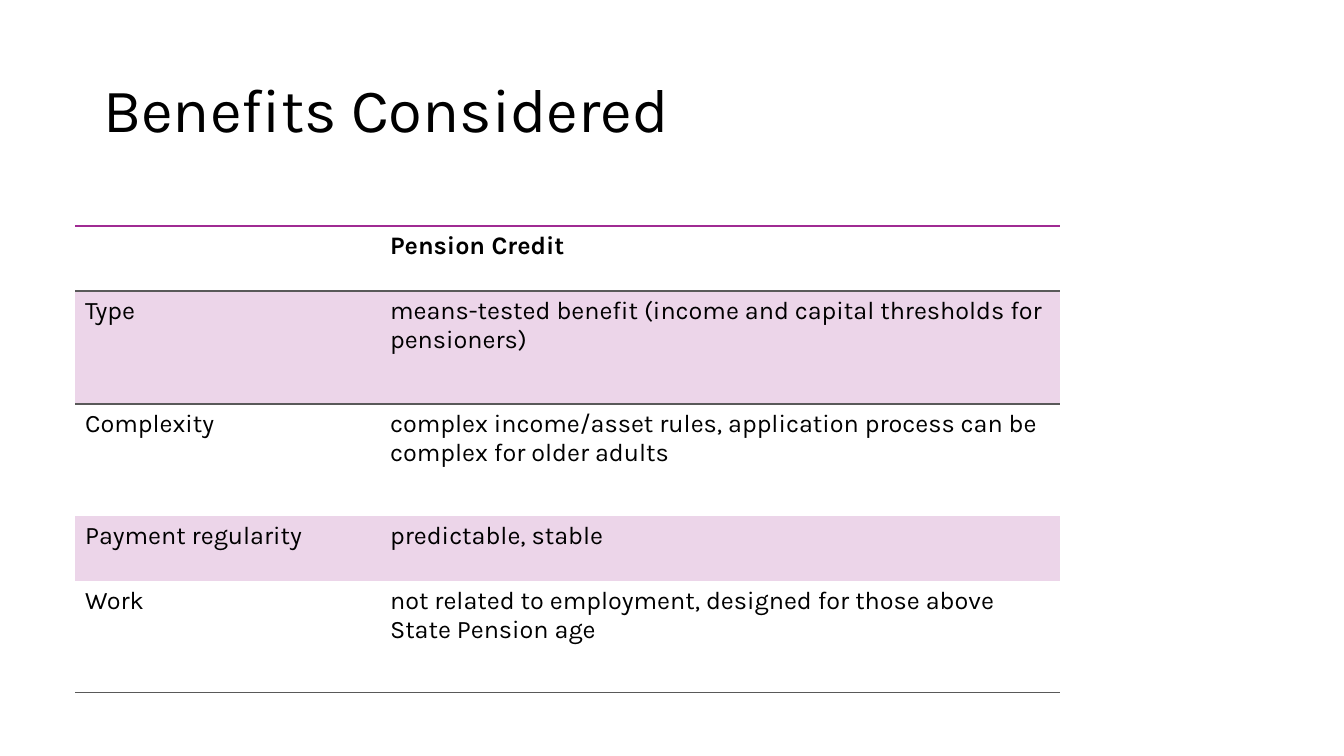
from lxml import etree
from pptx import Presentation
from pptx.dml.color import RGBColor
from pptx.enum.text import MSO_ANCHOR, PP_ALIGN
from pptx.oxml.ns import qn
from pptx.util import Emu, Pt

MIDDLE, LEFT = MSO_ANCHOR.MIDDLE, PP_ALIGN.LEFT

TITLE = "Benefits Considered"
ROWS = [
    ("", "Pension Credit"),
    ("Type", "means-tested benefit (income and capital thresholds for pensioners)"),
    ("Complexity", "complex income/asset rules, application process can be complex for older adults"),
    ("Payment regularity", "predictable, stable"),
    ("Work", "not related to employment, designed for those above State Pension age"),
]
COLUMN_WIDTHS = [305, 680]
ROW_HEIGHTS = [65, 113, 112, 65, 112]
TABLE_LEFT, TABLE_TOP = 75, 226

FONT = "Karla"
BLACK, PURPLE, GREY, BAND = "000000", "A02B93", "595959", "ECD5E9"
PLAIN_STYLE = "{2D5ABB26-0587-4C30-8999-92F81FD0307C}"


def px(length):
    return Emu(round(length * 914400 / 100.8))


def colour(value):
    return RGBColor.from_string(value)


def write(frame, text, size=18, bold=False, line_spacing=None):
    para = frame.paragraphs[0]
    para.alignment = LEFT
    para.line_spacing = line_spacing
    para.font.size = Pt(size)
    if text:
        span = para.add_run()
        span.text = text
        span.font.name = FONT
        span.font.size = Pt(size)
        span.font.bold = bold
        span.font.color.rgb = colour(BLACK)


def add_border(cell, tag, value):
    """Add a one-point edge; call before filling and in the order lnT, lnB."""
    properties = cell._tc.get_or_add_tcPr()
    line = etree.SubElement(properties, qn(tag), w=str(Pt(1)))
    fill = etree.SubElement(line, qn("a:solidFill"))
    etree.SubElement(fill, qn("a:srgbClr"), val=value)


def add_title(page):
    title = page.shapes.title
    title.left, title.top, title.width, title.height = map(px, (93, 40, 1159, 146))
    title.text_frame.vertical_anchor = MIDDLE
    title.text_frame.word_wrap = True
    write(title.text_frame, TITLE, size=44, line_spacing=0.9)


def add_benefits_table(page):
    frame = page.shapes.add_table(
        len(ROWS), len(COLUMN_WIDTHS), px(TABLE_LEFT), px(TABLE_TOP),
        px(sum(COLUMN_WIDTHS)), px(sum(ROW_HEIGHTS)))
    table = frame.table
    table._tbl.tblPr.find(qn("a:tableStyleId")).text = PLAIN_STYLE
    table.first_row = table.horz_banding = False
    for column, width in zip(table.columns, COLUMN_WIDTHS):
        column.width = px(width)
    for row, height in zip(table.rows, ROW_HEIGHTS):
        row.height = px(height)

    for row_index, texts in enumerate(ROWS):
        header = row_index == 0
        for column_index, text in enumerate(texts):
            cell = table.cell(row_index, column_index)
            write(cell.text_frame, text, bold=header)
            if header:
                add_border(cell, "a:lnT", PURPLE)
            elif row_index == 1:
                add_border(cell, "a:lnT", GREY)
            if header or row_index == len(ROWS) - 1:
                add_border(cell, "a:lnB", GREY)
            if row_index % 2:
                cell.fill.solid()
                cell.fill.fore_color.rgb = colour(BAND)
            else:
                cell.fill.background()


def main():
    deck = Presentation()
    deck.slide_width, deck.slide_height = px(1344), px(756)
    page = deck.slides.add_slide(deck.slide_layouts[5])
    add_title(page)
    add_benefits_table(page)
    deck.save("out.pptx")


if __name__ == "__main__":
    main()
